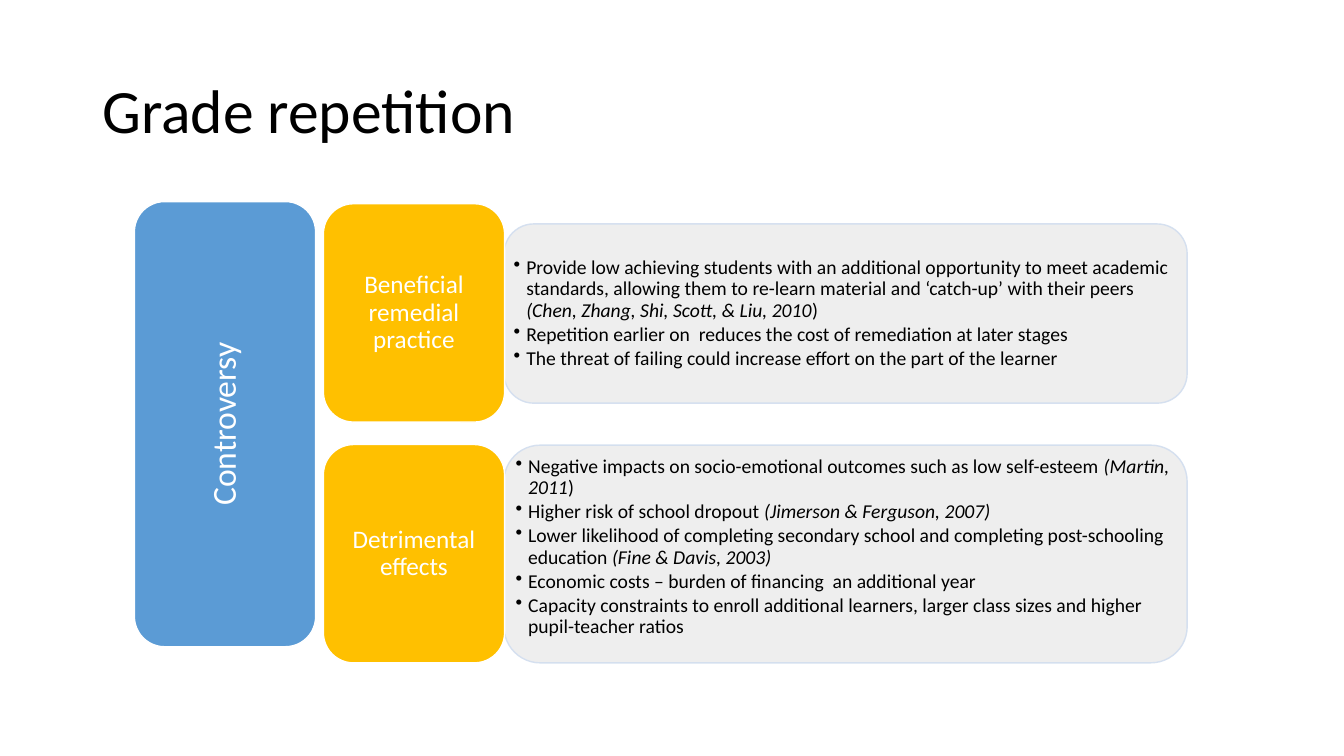
from lxml.etree import SubElement
from pptx import Presentation
from pptx.dml.color import RGBColor
from pptx.enum.shapes import MSO_SHAPE
from pptx.enum.text import MSO_ANCHOR, PP_ALIGN
from pptx.oxml.ns import qn
from pptx.util import Pt

FONT = "Calibri"
BLACK, WHITE = "000000", "FFFFFF"
BLUE, GOLD, GREY, PALE_BLUE = "5B9BD5", "FFC000", "EDEDED", "D2DEEF"

CARD_LEFT, CARD_WIDTH, CARD_HEIGHT = 231, 129.5, 156
PANEL_LEFT, PANEL_WIDTH = 360, 488

# Each point is a list of (text, italic) runs.
BENEFITS = [
    [("Provide low achieving students with an additional opportunity to meet academic "
      "standards, allowing them to re-learn material and ‘catch-up’ with their peers ", False),
     ("(Chen, Zhang, Shi, Scott, & Liu, 2010", True), (")", False)],
    [("Repetition earlier on  reduces the cost of remediation at later stages", False)],
    [("The threat of failing could increase effort on the part of the learner", False)],
]
HARMS = [
    [("Negative impacts on socio-emotional outcomes such as low self-esteem ", False),
     ("(Martin, 2011", True), (")", False)],
    [("Higher risk of school dropout ", False), ("(Jimerson & Ferguson, 2007)", True)],
    [("Lower likelihood of completing secondary school and completing post-schooling "
      "education ", False), ("(Fine & Davis, 2003)", True)],
    [("Economic costs – burden of financing  an additional year", False)],
    [("Capacity constraints to enroll additional learners, larger class sizes and higher "
      "pupil-teacher ratios", False)],
]


def rgb(value):
    return RGBColor.from_string(value)


def add_run(paragraph, text, size, color, italic=False):
    run = paragraph.add_run()
    run.text = text
    run.font.name = FONT
    run.font.size = Pt(size)
    run.font.italic = italic
    run.font.color.rgb = rgb(color)


def set_frame(frame, anchor, side, top):
    """Wrap the text, anchor it and set its side and top/bottom margins."""
    frame.word_wrap = True
    frame.vertical_anchor = anchor
    frame.margin_left = frame.margin_right = Pt(side)
    frame.margin_top = frame.margin_bottom = Pt(top)


def set_opacity(color_format_fill, percent):
    color = color_format_fill.find(".//" + qn("a:srgbClr"))
    SubElement(color, qn("a:alpha"), val=str(percent * 1000))


def add_bullet(paragraph, indent):
    properties = paragraph._p.get_or_add_pPr()
    properties.set("marL", str(Pt(indent)))
    properties.set("indent", str(-Pt(indent)))
    SubElement(properties, qn("a:buChar"), char="•")


def add_rounded(slide, left, top, width, height, fill, line):
    shape = slide.shapes.add_shape(
        MSO_SHAPE.ROUNDED_RECTANGLE, Pt(left), Pt(top), Pt(width), Pt(height))
    shape.shadow.inherit = False
    shape.fill.solid()
    shape.fill.fore_color.rgb = rgb(fill)
    shape.line.color.rgb = rgb(line)
    shape.line.width = Pt(1)
    return shape


def add_title(slide, text):
    box = slide.shapes.add_textbox(Pt(66), Pt(29), Pt(828), Pt(104.5))
    set_frame(box.text_frame, MSO_ANCHOR.MIDDLE, 7.2, 3.6)
    paragraph = box.text_frame.paragraphs[0]
    paragraph.line_spacing = 0.9
    add_run(paragraph, text, 44, BLACK)


def add_card(slide, left, top, height, fill, text, size):
    shape = add_rounded(slide, left, top, CARD_WIDTH, height, fill, WHITE)
    set_frame(shape.text_frame, MSO_ANCHOR.MIDDLE, 5, 2.5)
    paragraph = shape.text_frame.paragraphs[0]
    paragraph.alignment = PP_ALIGN.CENTER
    paragraph.line_spacing = 0.9
    add_run(paragraph, text, size, WHITE)
    return shape


def add_panel(slide, top, height, points, anchor):
    shape = add_rounded(slide, PANEL_LEFT, top, PANEL_WIDTH, height, GREY, PALE_BLUE)
    for color_fill in shape._element.spPr.iter(qn("a:solidFill")):
        set_opacity(color_fill, 90)
    frame = shape.text_frame
    set_frame(frame, anchor, 0.7, 0.7)
    for index, runs in enumerate(points):
        paragraph = frame.add_paragraph() if index else frame.paragraphs[0]
        paragraph.alignment = PP_ALIGN.LEFT
        paragraph.line_spacing = 0.9
        paragraph.space_after = Pt(2)
        add_bullet(paragraph, 9)
        for text, italic in runs:
            add_run(paragraph, text, 14, BLACK, italic)


def main():
    presentation = Presentation()
    presentation.slide_width, presentation.slide_height = Pt(960), Pt(540)
    slide = presentation.slides.add_slide(presentation.slide_layouts[6])

    add_title(slide, "Grade repetition")
    add_panel(slide, 160, 128, BENEFITS, MSO_ANCHOR.MIDDLE)
    add_card(slide, CARD_LEFT, 145.5, CARD_HEIGHT, GOLD, "Beneficial remedial practice", 18)
    add_panel(slide, 318, 155.5, HARMS, MSO_ANCHOR.TOP)
    add_card(slide, CARD_LEFT, 317.5, CARD_HEIGHT, GOLD, "Detrimental effects", 18)
    controversy = add_card(slide, 96, 144, 318, BLUE, "Controversy", 24)
    controversy.text_frame._txBody.bodyPr.set("vert", "vert270")

    presentation.save("out.pptx")


if __name__ == "__main__":
    main()
